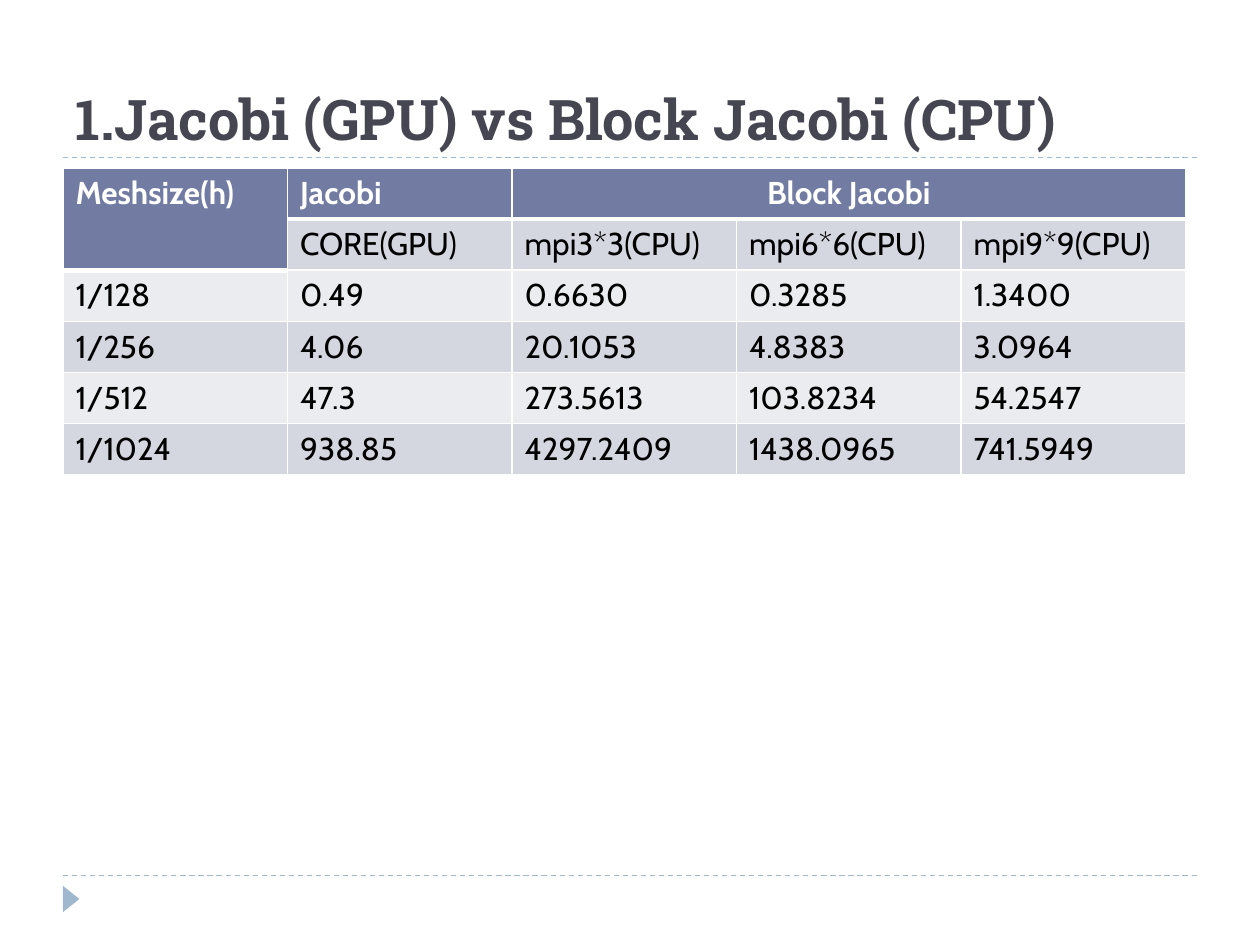
from dataclasses import dataclass

from lxml.etree import SubElement
from pptx import Presentation
from pptx.dml.color import RGBColor
from pptx.enum.dml import MSO_LINE_DASH_STYLE as Dash
from pptx.enum.shapes import MSO_CONNECTOR as Connector, MSO_SHAPE as Shape
from pptx.enum.text import MSO_ANCHOR as Anchor, PP_ALIGN as Align
from pptx.oxml.ns import qn
from pptx.util import Pt

PAGE_WIDTH, PAGE_HEIGHT = 720, 540
MARGIN = 36
WHITE, BLACK = "FFFFFF", "000000"
SLATE, ACCENT, HEADER = "464653", "9FB8CD", "727CA3"
BANDS = ("EBECF0", "D5D7E0")
COLUMN_WIDTH, ROW_HEIGHT = 128.3, 29.2
TABLE_TOP = 96


@dataclass
class TextStyle:
    font: str
    size: float
    color: str
    bold: bool = False


TITLE = TextStyle("Roboto Slab", 32, SLATE, True)
HEAD = TextStyle("Cabin", 18, WHITE, True)
BODY = TextStyle("Cabin", 18, BLACK)

ROWS = [
    ("Meshsize(h)", "Jacobi", "Block Jacobi", "", ""),
    ("", "CORE(GPU)", "mpi3*3(CPU)", "mpi6*6(CPU)", "mpi9*9(CPU)"),
    ("1/128", "0.49", "0.6630", "0.3285", "1.3400"),
    ("1/256", "4.06", "20.1053", "4.8383", "3.0964"),
    ("1/512", "47.3", "273.5613", "103.8234", "54.2547"),
    ("1/1024", "938.85", "4297.2409", "1438.0965", "741.5949"),
]


def rgb(color: str) -> RGBColor:
    return RGBColor.from_string(color)


def add_span(para, text: str, style: TextStyle) -> None:
    span = para.add_run()
    span.text = text
    font = span.font
    font.name, font.size, font.bold = style.font, Pt(style.size), style.bold
    font.color.rgb = rgb(style.color)


def add_rule(page, y: float) -> None:
    rule = page.shapes.add_connector(
        Connector.STRAIGHT, Pt(MARGIN), Pt(y), Pt(PAGE_WIDTH - MARGIN), Pt(y))
    rule.line.color.rgb = rgb(ACCENT)
    rule.line.width = Pt(0.75)
    rule.line.dash_style = Dash.DASH
    SubElement(rule.element.spPr, qn("a:effectLst"))


def add_marker(page) -> None:
    marker = page.shapes.add_shape(
        Shape.ISOSCELES_TRIANGLE, Pt(33.1), Pt(509), Pt(15.1), Pt(9.4))
    marker.rotation = 90
    marker.shadow.inherit = False
    marker.fill.solid()
    marker.fill.fore_color.rgb = rgb(ACCENT)
    marker.line.fill.background()


def add_title(page, text: str) -> None:
    box = page.shapes.add_textbox(
        Pt(MARGIN), Pt(12), Pt(PAGE_WIDTH - 2 * MARGIN), Pt(78))
    frame = box.text_frame
    frame.word_wrap = True
    frame.vertical_anchor = Anchor.BOTTOM
    add_span(frame.paragraphs[0], text, TITLE)


def set_borders(cell, top: float, bottom: float) -> None:
    properties = cell._tc.get_or_add_tcPr()
    for side, width in (("L", 1), ("R", 1), ("T", top), ("B", bottom)):
        line = SubElement(properties, qn(f"a:ln{side}"), w=str(Pt(width)))
        fill = SubElement(line, qn("a:solidFill"))
        SubElement(fill, qn("a:srgbClr"), val=WHITE)


def is_header(row: int, column: int) -> bool:
    return row == 0 or (row == 1 and column == 0)


def add_results(page) -> None:
    row_count, column_count = len(ROWS), len(ROWS[0])
    table = page.shapes.add_table(
        row_count, column_count, Pt(MARGIN), Pt(TABLE_TOP),
        Pt(COLUMN_WIDTH * column_count), Pt(ROW_HEIGHT * row_count)).table
    for column in table.columns:
        column.width = Pt(COLUMN_WIDTH)
    for row in table.rows:
        row.height = Pt(ROW_HEIGHT)

    for i, texts in enumerate(ROWS):
        for j, text in enumerate(texts):
            cell = table.cell(i, j)
            header = is_header(i, j)
            # A thick line separates header cells from the cells below
            set_borders(cell, top=3 if i and is_header(i - 1, j) else 1,
                        bottom=3 if header else 1)
            cell.fill.solid()
            cell.fill.fore_color.rgb = rgb(HEADER if header else BANDS[i % 2])
            if text:
                add_span(cell.text_frame.paragraphs[0], text,
                         HEAD if header else BODY)

    # Spanning header cells
    table.cell(0, 0).merge(table.cell(1, 0))
    table.cell(0, 2).merge(table.cell(0, 4))
    table.cell(0, 2).text_frame.paragraphs[0].alignment = Align.CENTER


def main() -> None:
    deck = Presentation()
    deck.slide_width, deck.slide_height = Pt(PAGE_WIDTH), Pt(PAGE_HEIGHT)
    page = deck.slides.add_slide(deck.slide_layouts[6])

    # Page frame
    for y in (500.4, 90):
        add_rule(page, y)
    add_marker(page)

    # Content
    add_title(page, "1.Jacobi (GPU) vs Block Jacobi (CPU)")
    add_results(page)
    deck.save("out.pptx")


if __name__ == "__main__":
    main()
